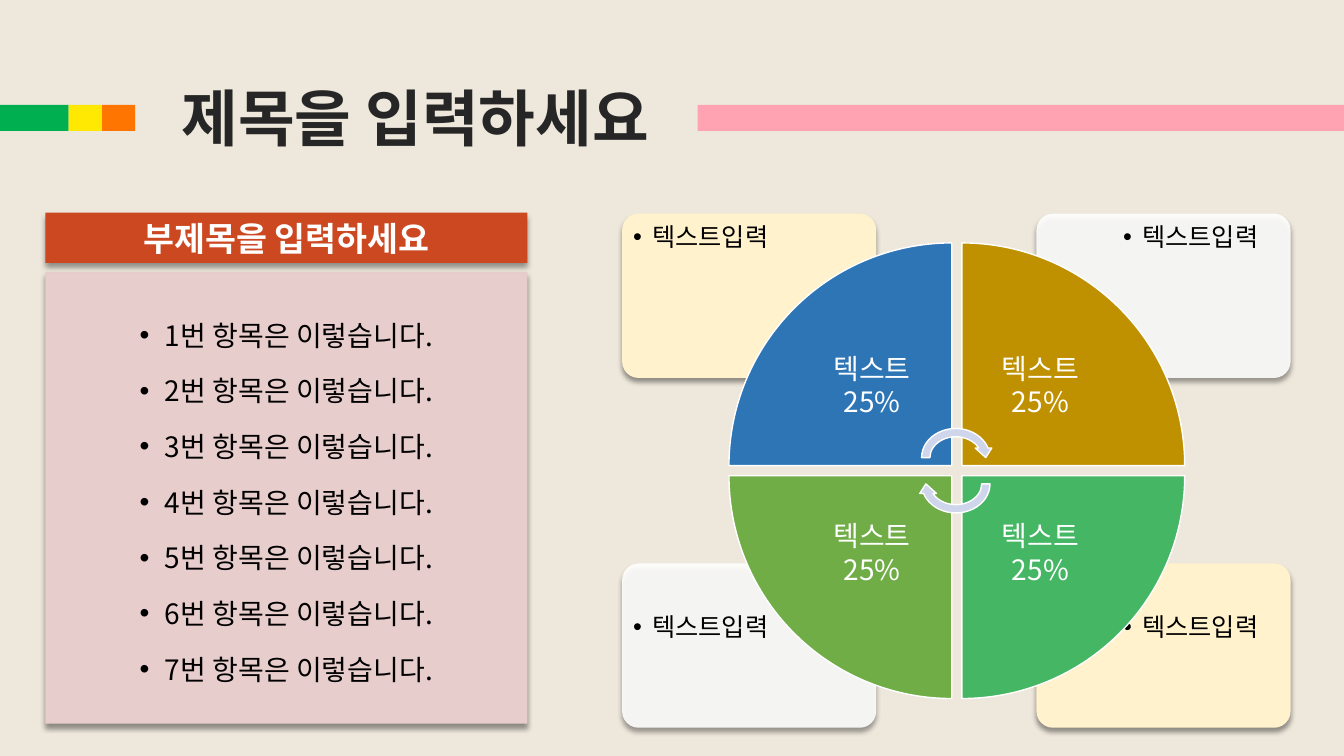
from lxml.etree import SubElement
from pptx import Presentation
from pptx.dml.color import RGBColor
from pptx.enum.shapes import MSO_SHAPE
from pptx.enum.text import MSO_ANCHOR, PP_ALIGN
from pptx.oxml.ns import qn
from pptx.util import Inches, Pt

FONT = "Noto Sans CJK KR"
BACKGROUND = RGBColor(0xEE, 0xE8, 0xDC)
DARK = RGBColor(0x26, 0x26, 0x26)
BLACK = RGBColor(0, 0, 0)
WHITE = RGBColor(0xFF, 0xFF, 0xFF)
GREEN = RGBColor(0x00, 0xB0, 0x50)
YELLOW = RGBColor(0xFF, 0xE8, 0x02)
ORANGE = RGBColor(0xFF, 0x75, 0x01)
PINK = RGBColor(0xFF, 0xA2, 0xB1)
RUST = RGBColor(0xCC, 0x48, 0x21)
ROSE = RGBColor(0xE7, 0xCD, 0xCB)
CREAM = RGBColor(0xFF, 0xF2, 0xCC)
BLUE = RGBColor(0x2E, 0x75, 0xB6)
GOLD = RGBColor(0xBF, 0x90, 0x00)
MINT = RGBColor(0x45, 0xB6, 0x64)
LEAF = RGBColor(0x70, 0xAD, 0x47)
ARROW = RGBColor(0xCF, 0xD5, 0xEA)


def set_attrs(obj, values):
    for name, value in values.items():
        setattr(obj, name, value)


def add_alpha(color, percent):
    SubElement(color, qn("a:alpha"), val=str(percent * 1000))


def add_shadow(sp):
    effects = sp._element.spPr.find(qn("a:effectLst"))
    shadow = SubElement(effects, qn("a:outerShdw"), blurRad=str(Pt(4)),
                        dist=str(Pt(3)), dir="5400000", rotWithShape="0")
    add_alpha(SubElement(shadow, qn("a:srgbClr"), val="000000"), 40)


def add_shape(s, kind, at, fill, shadow=False, outline=False, rotation=0, alpha=100):
    sp = s.shapes.add_shape(kind, *map(Inches, at))
    sp.rotation = rotation
    sp.shadow.inherit = False
    sp.fill.solid()
    sp.fill.fore_color.rgb = fill
    if alpha < 100:
        add_alpha(sp._element.spPr.find(qn("a:solidFill"))[0], alpha)
    if outline:
        sp.line.color.rgb = WHITE
        sp.line.width = Pt(1)
    else:
        sp.line.fill.background()
    if shadow:
        add_shadow(sp)
    return sp


def add_bullet(p, indent):
    pPr = p._p.get_or_add_pPr()
    pPr.set("marL", str(Inches(indent)))
    pPr.set("indent", str(-Inches(indent)))
    SubElement(pPr, qn("a:buFont"), typeface="Arial")
    SubElement(pPr, qn("a:buChar"), char="•")


def write(sp, lines, size, color, bold=False, inset=None, bullet=0,
          anchor=MSO_ANCHOR.MIDDLE, **spacing):
    tf = sp.text_frame
    set_attrs(tf, {"word_wrap": True, "vertical_anchor": anchor})
    if inset is not None:
        sides = ("margin_left", "margin_top", "margin_right", "margin_bottom")
        set_attrs(tf, dict.fromkeys(sides, Inches(inset)))
    for i, line in enumerate(lines):
        p = tf.add_paragraph() if i else tf.paragraphs[0]
        set_attrs(p, {"alignment": PP_ALIGN.CENTER, **spacing})
        if bullet:
            add_bullet(p, bullet)
        r = p.add_run()
        r.text = line
        set_attrs(r.font, {"name": FONT, "size": Pt(size), "bold": bold})
        r.font.color.rgb = color
        SubElement(r._r.get_or_add_rPr(), qn("a:ea"), typeface=FONT)


def add_text(s, at, lines, size, color, **style):
    write(s.shapes.add_textbox(*map(Inches, at)), lines, size, color, **style)


def add_header(s):
    title = s.shapes.title
    box = map(Inches, (1.33, 0.91, 5.58, 0.64))
    set_attrs(title, dict(zip(("left", "top", "width", "height"), box)))
    write(title, ["제목을 입력하세요"], 44, DARK, bold=True, line_spacing=0.8)
    for left, width, color in ((0, 0.68, GREEN), (0.68, 0.33, YELLOW),
                               (1.01, 0.33, ORANGE), (6.92, 6.42, PINK)):
        add_shape(s, MSO_SHAPE.RECTANGLE, (left, 1.04, width, 0.26), color)


def add_list(s):
    panel = add_shape(s, MSO_SHAPE.RECTANGLE, (0.45, 2.7, 4.78, 4.48), ROSE, shadow=True)
    items = [f"{n}번 항목은 이렇습니다." for n in range(1, 8)]
    write(panel, items, 20, BLACK, bullet=0.25, line_spacing=1.24, space_before=Pt(10))
    heading = add_shape(s, MSO_SHAPE.RECTANGLE, (0.45, 2.11, 4.78, 0.5), RUST, shadow=True)
    write(heading, ["부제목을 입력하세요"], 24, WHITE, bold=True)


def add_card(s, col, row):
    left, top = (6.17, 10.28)[col], (2.12, 5.59)[row]
    cream = col == row
    card = add_shape(s, MSO_SHAPE.ROUNDED_RECTANGLE, (left, top, 2.52, 1.63),
                     CREAM if cream else WHITE, shadow=True, alpha=100 if cream else 90)
    card.adjustments[0] = 0.1
    at = ((6.21, 11.07)[col], (2.16, 6.03)[row], 1.69, 1.15)
    add_text(s, at, ["텍스트입력"], 18, BLACK, inset=0.07, bullet=0.19,
             anchor=MSO_ANCHOR.TOP, alignment=PP_ALIGN.LEFT, line_spacing=0.9)


def add_wedge(s, col, row, color, rotation):
    at = (7.23 + 2.31 * col, 2.41 + 2.31 * row, 2.21, 2.21)
    add_shape(s, MSO_SHAPE.PIE_WEDGE, at, color, outline=True, rotation=rotation)
    at = ((7.87, 9.54)[col], (3.06, 4.72)[row], 1.56, 1.56)
    add_text(s, at, ["텍스트", "25%"], 20, WHITE, inset=0.16,
             line_spacing=0.9, space_after=Pt(2.5))


def add_cycle(s):
    for col, row in ((1, 1), (0, 1), (1, 0), (0, 0)):
        add_card(s, col, row)
    # Quarters run clockwise from the top left
    quarters = ((0, 0, BLUE), (1, 0, GOLD), (1, 1, MINT), (0, 1, LEAF))
    for i, (col, row, color) in enumerate(quarters):
        add_wedge(s, col, row, color, 90 * i)
    for top, rotation in ((4.21, 0), (4.47, 180)):
        add_shape(s, MSO_SHAPE.CIRCULAR_ARROW, (9.1, top, 0.76, 0.66), ARROW,
                  outline=True, rotation=rotation)


def main():
    prs = Presentation()
    prs.slide_width, prs.slide_height = Inches(13.33), Inches(7.5)
    s = prs.slides.add_slide(prs.slide_layouts[5])
    s.background.fill.solid()
    s.background.fill.fore_color.rgb = BACKGROUND
    add_header(s)
    add_cycle(s)
    add_list(s)
    prs.save("out.pptx")


if __name__ == "__main__":
    main()
